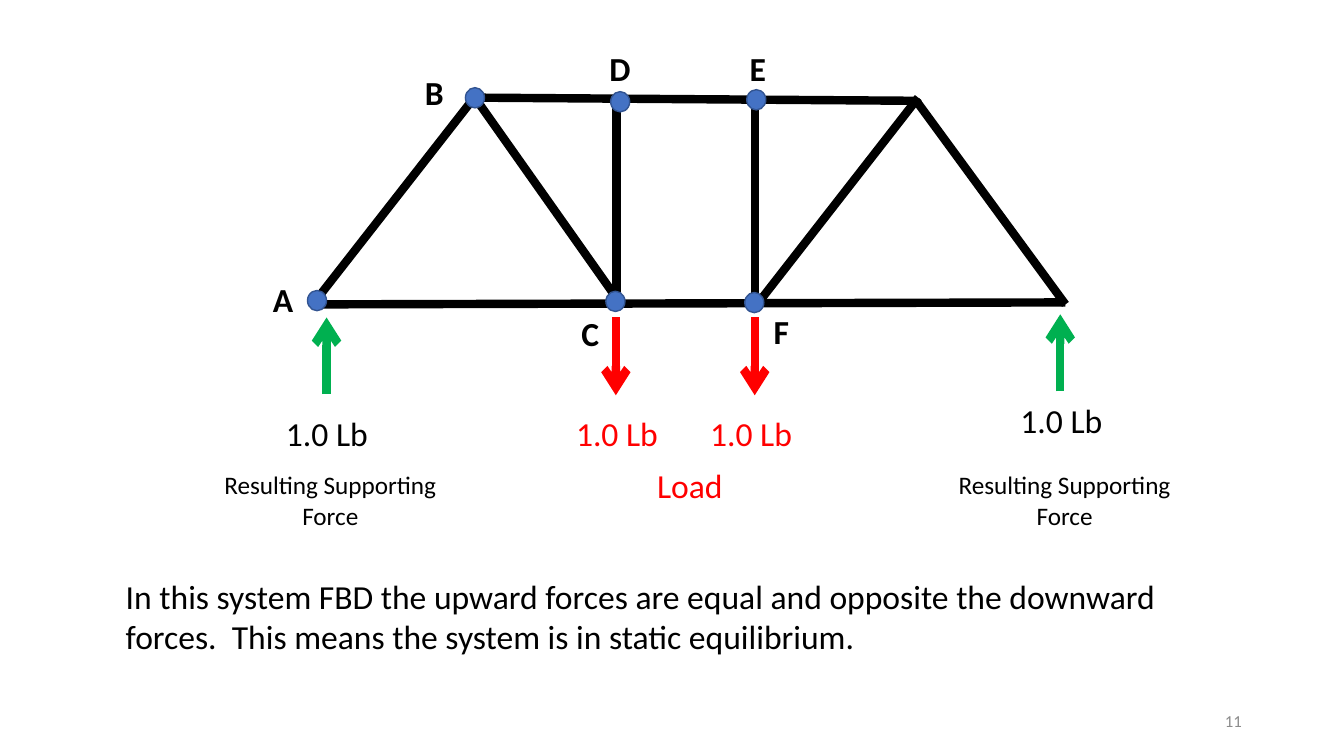
"""Build a slide with the free body diagram of a truss in static equilibrium."""
from lxml import etree
from pptx import Presentation
from pptx.dml.color import RGBColor
from pptx.enum import shapes, text
from pptx.oxml import ns
from pptx.util import Cm, Pt

COLORS = {"black": "000000", "load": "FF0000", "support": "00B050",
          "joint": "4472C4", "rim": "325491", "number": "8C8C8C"}
MEMBERS = [
    ((15.54, 7.7), (15.54, 2.41)),
    ((7.92, 7.67), (26.85, 7.62)),
    ((11.96, 2.46), (23.09, 2.54)),
    ((7.92, 7.62), (11.99, 2.41)),
    ((19.08, 7.67), (23.14, 2.46)),
    ((15.67, 7.7), (11.99, 2.49)),
    ((26.85, 7.67), (23.09, 2.54)),
    ((19.02, 7.7), (19.02, 2.41)),
]
FORCES = [
    ("load", (15.52, 8), (15.52, 9.96)),
    ("load", (19.02, 8), (19.02, 9.96)),
    ("support", (26.72, 9.86), (26.72, 7.92)),
    ("support", (8.23, 9.93), (8.23, 8)),
]
JOINTS = {
    "A": ((7.75, 7.32), (6.63, 6.91)),
    "B": ((11.73, 2.21), (10.46, 1.68)),
    "C": ((15.27, 7.34), (14.4, 7.77)),
    "D": ((15.39, 2.31), (15.11, 1.09)),
    "E": ((18.82, 2.26), (18.64, 1.09)),
    "F": ((18.77, 7.37), (19.25, 7.7)),
}
MAGNITUDES = [(14.17, 10.29, "load"), (17.55, 10.29, "load"),
              (25.37, 9.96, "black"), (6.86, 10.29, "black")]
SUPPORT_NOTES = [(5.05, 6.55), (23.44, 6.78)]
SUMMARY = ("In this system FBD the upward forces are equal and opposite the downward "
           "forces.  This means the system is in static equilibrium.")


def color(name):
    return RGBColor.from_string(COLORS[name])


def add_text(page, words, left, top, width, height=1.27, size=24, ink="black",
             bold=False, align=text.PP_ALIGN.CENTER, anchor=text.MSO_ANCHOR.TOP):
    box = page.shapes.add_textbox(Cm(left), Cm(top), Cm(width), Cm(height))
    frame = box.text_frame
    frame.word_wrap = True
    frame.vertical_anchor = anchor
    para = frame.paragraphs[0]
    para.alignment = align
    span = para.add_run()
    span.text = words
    span.font.name = "Calibri"
    span.font.size = Pt(size)
    span.font.bold = bold
    span.font.color.rgb = color(ink)


def add_line(page, start, end, ink="black", arrow=False):
    line = page.shapes.add_connector(shapes.MSO_CONNECTOR.STRAIGHT,
                                     *map(Cm, start + end))
    line.line.color.rgb = color(ink)
    line.line.width = Pt(6)
    if arrow:
        etree.SubElement(line.line._get_or_add_ln(), ns.qn("a:tailEnd"), type="arrow")
    etree.SubElement(line._element.spPr, ns.qn("a:effectLst"))


def add_joint(page, left, top):
    joint = page.shapes.add_shape(shapes.MSO_SHAPE.OVAL,
                                  Cm(left), Cm(top), Cm(0.48), Cm(0.51))
    joint.shadow.inherit = False
    joint.fill.solid()
    joint.fill.fore_color.rgb = color("joint")
    joint.line.color.rgb = color("rim")
    joint.line.width = Pt(1)


def main():
    deck = Presentation()
    deck.slide_width, deck.slide_height = Cm(33.87), Cm(19.05)
    page = deck.slides.add_slide(deck.slide_layouts[6])

    for start, end in MEMBERS:
        add_line(page, start, end)
    for ink, start, end in FORCES:
        add_line(page, start, end, ink, arrow=True)
    for name, (spot, label) in JOINTS.items():
        add_joint(page, *spot)
        add_text(page, name, *label, 1.22, bold=True, align=text.PP_ALIGN.LEFT)

    for left, top, ink in MAGNITUDES:
        add_text(page, "1.0 Lb ", left, top, 2.95, ink=ink)
    add_text(page, "Load ", 16.23, 11.58, 2.31, ink="load")
    for left, width in SUPPORT_NOTES:
        add_text(page, "Resulting Supporting Force", left, 11.71, width, 1.8, size=18)
    add_text(page, SUMMARY, 2.92, 14.38, 28.6, 2.31, align=text.PP_ALIGN.LEFT)
    add_text(page, "11", 23.93, 17.65, 7.62, 1.02, size=12, ink="number",
             align=text.PP_ALIGN.RIGHT, anchor=text.MSO_ANCHOR.MIDDLE)
    deck.save("out.pptx")


if __name__ == "__main__":
    main()
